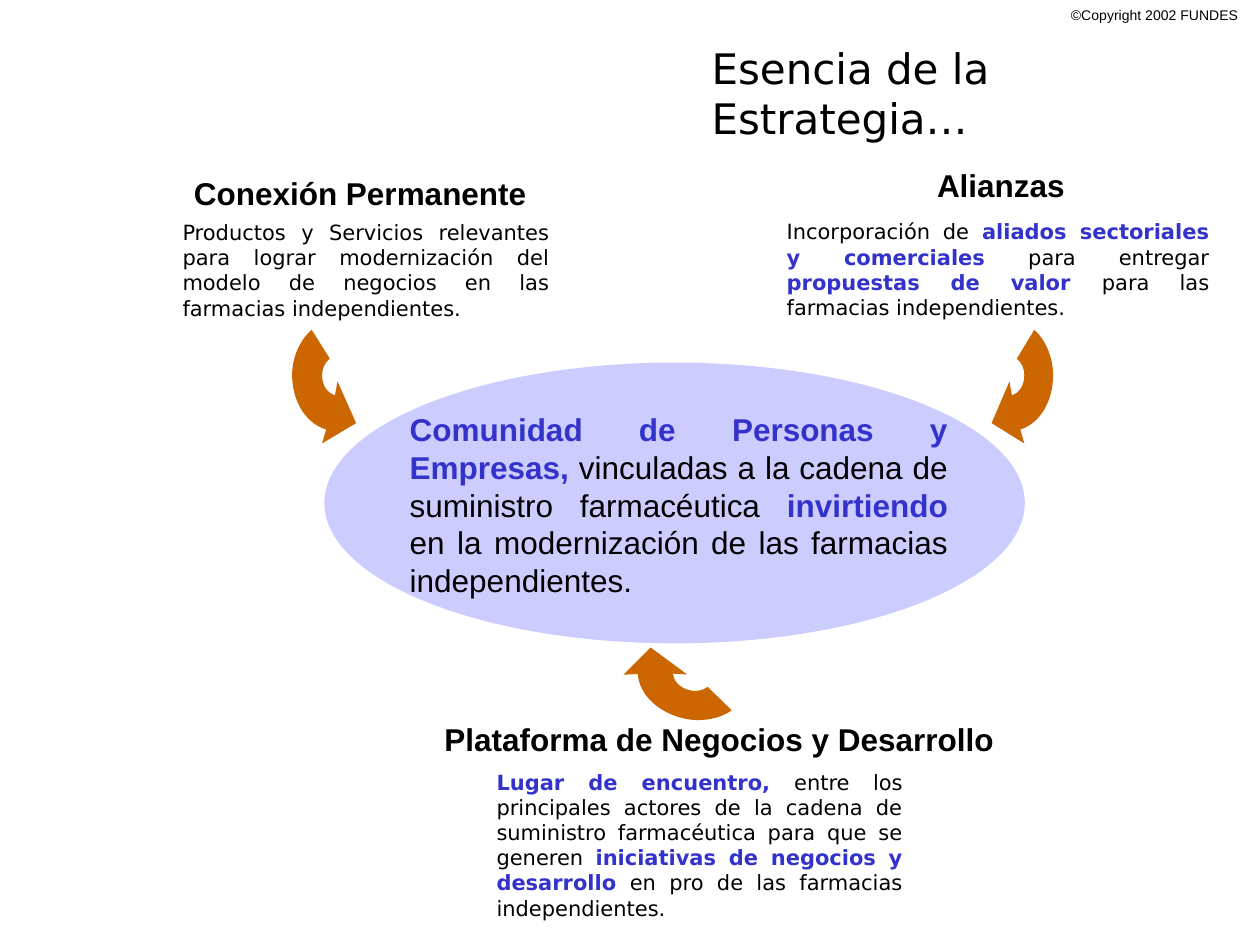
from lxml.etree import SubElement
from pptx import Presentation
from pptx.dml.color import RGBColor
from pptx.enum.shapes import MSO_SHAPE as Shape
from pptx.enum.text import MSO_ANCHOR as Anchor, MSO_AUTO_SIZE as AutoSize, PP_ALIGN as Align
from pptx.oxml.ns import qn
from pptx.util import Cm, Pt

BLACK, BLUE, LAVENDER, ORANGE = "000000", "3333CC", "CCCCFF", "CC6600"
SANS, WIDE = "Arial", "DejaVu Sans"

# Arrow outline in tenths of a millimetre: one point is a line, three a curve
ARROW_WIDTH = 124
ARROW_START = (41, 132)
ARROW_SEGMENTS = [
    [(56, 127), (66, 112), (66, 91)],
    [(66, 79), (61, 66), (51, 58)],
    [(86, 0)],
    [(109, 20), (124, 56), (124, 91)],
    [(124, 142), (99, 188), (58, 201)],
    [(66, 229)],
    [(0, 188)],
    [(36, 104)],
]


def color(hex_code):
    return RGBColor.from_string(hex_code)


def paint(shape, hex_code):
    shape.shadow.inherit = False
    shape.fill.solid()
    shape.fill.fore_color.rgb = color(hex_code)
    shape.line.fill.background()


def style_run(run, font_name, size, hex_code=BLACK, bold=False):
    run.font.name = font_name
    run.font.size = Pt(size)
    run.font.bold = bold
    run.font.color.rgb = color(hex_code)


def add_text_frame(slide, left, top, width, height, wrap):
    frame = slide.shapes.add_textbox(Cm(left), Cm(top), Cm(width), Cm(height)).text_frame
    frame.word_wrap = wrap
    frame.auto_size = AutoSize.SHAPE_TO_FIT_TEXT
    return frame


def add_label(slide, text, left, top, width, height, size, bold=False):
    """Add a one-line Arial text that does not wrap."""
    frame = add_text_frame(slide, left, top, width, height, wrap=False)
    frame.text = text
    style_run(frame.paragraphs[0].runs[0], SANS, size, bold=bold)


def add_justified(slide, parts, left, top, width, height, font_name, size):
    """Add a justified paragraph; parts between asterisks are bold and blue."""
    paragraph = add_text_frame(slide, left, top, width, height, wrap=True).paragraphs[0]
    paragraph.alignment = Align.JUSTIFY
    for index, text in enumerate(parts.split("*")):
        if not text:
            continue
        run = paragraph.add_run()
        run.text = text
        stressed = index % 2 == 1
        style_run(run, font_name, size, BLUE if stressed else BLACK, stressed)


def bend_curves(arrow):
    """Turn each run of three lines that stands for a curve into a Bézier curve."""
    outline = arrow._element.find(".//" + qn("a:path"))
    lines = iter(outline.findall(qn("a:lnTo")))
    for segment in ARROW_SEGMENTS:
        pieces = [next(lines) for _ in segment]
        if len(pieces) == 3:
            curve = SubElement(outline, qn("a:cubicBezTo"))
            pieces[0].addprevious(curve)
            for piece in pieces:
                curve.append(piece[0])
                outline.remove(piece)


def add_arrow(slide, left, top, width, mirrored=False, rotation=0):
    outline = [ARROW_START] + [point for segment in ARROW_SEGMENTS for point in segment]
    if mirrored:
        outline = [(ARROW_WIDTH - x, y) for x, y in outline]
    builder = slide.shapes.build_freeform(*outline[0], scale=Cm(0.01))
    builder.add_line_segments(outline[1:], close=True)
    arrow = builder.convert_to_shape()
    bend_curves(arrow)
    arrow.left, arrow.top, arrow.width = Cm(left), Cm(top), Cm(width)
    arrow.rotation = rotation
    paint(arrow, ORANGE)


def set_title(slide, text):
    title = slide.shapes.title
    title.left, title.top, title.width, title.height = Cm(14.09), Cm(0.73), Cm(11.35), Cm(1.27)
    frame = title.text_frame
    frame.text = text
    frame.word_wrap = True
    frame.auto_size = AutoSize.NONE
    frame.vertical_anchor = Anchor.TOP
    frame.paragraphs[0].alignment = Align.LEFT
    style_run(frame.paragraphs[0].runs[0], WIDE, 24)


def add_community(slide):
    ellipse = slide.shapes.add_shape(Shape.OVAL, Cm(6.54), Cm(7.31), Cm(14.12), Cm(5.66))
    paint(ellipse, LAVENDER)
    add_justified(
        slide,
        "*Comunidad de Personas y Empresas,* vinculadas a la cadena de suministro "
        "farmacéutica *invirtiendo* en la modernización de las farmacias independientes.",
        8.01, 8.14, 11.35, 4.06, SANS, 18)


def main():
    prs = Presentation()
    prs.slide_width, prs.slide_height = Cm(25.4), Cm(19.05)
    slide = prs.slides.add_slide(prs.slide_layouts[5])

    add_label(slide, "©Copyright 2002 FUNDES", 21.34, 0, 3.89, 0.58, 8)
    set_title(slide, "Esencia de la Estrategia…")
    add_community(slide)

    add_label(slide, "Conexión Permanente", 3.66, 3.38, 7.21, 1.02, 18, bold=True)
    add_justified(
        slide,
        "Productos y Servicios relevantes para lograr modernización del modelo de "
        "negocios en las farmacias independientes.",
        3.43, 4.3, 7.9, 2.29, WIDE, 12)
    add_arrow(slide, 5.89, 6.65, 1.29, mirrored=True)

    add_label(slide, "Alianzas", 18.64, 3.23, 3.1, 1.02, 18, bold=True)
    add_justified(
        slide,
        "Incorporación de *aliados sectoriales y comerciales* para entregar "
        "*propuestas de valor *para las farmacias independientes.",
        15.61, 4.29, 9.02, 2.29, WIDE, 12)
    add_arrow(slide, 19.99, 6.65, 1.24)

    add_label(slide, "Plataforma de Negocios y Desarrollo", 8.71, 14.4, 11.58, 1.02, 18, bold=True)
    add_justified(
        slide,
        "*Lugar de encuentro,* entre los principales actores de la cadena de suministro "
        "farmacéutica para que se generen *iniciativas de negocios y desarrollo* en pro "
        "de las farmacias independientes.",
        9.76, 15.38, 8.69, 3.3, WIDE, 12)
    add_arrow(slide, 13.07, 12.68, 1.24, rotation=103.2)

    prs.save("out.pptx")


if __name__ == "__main__":
    main()
